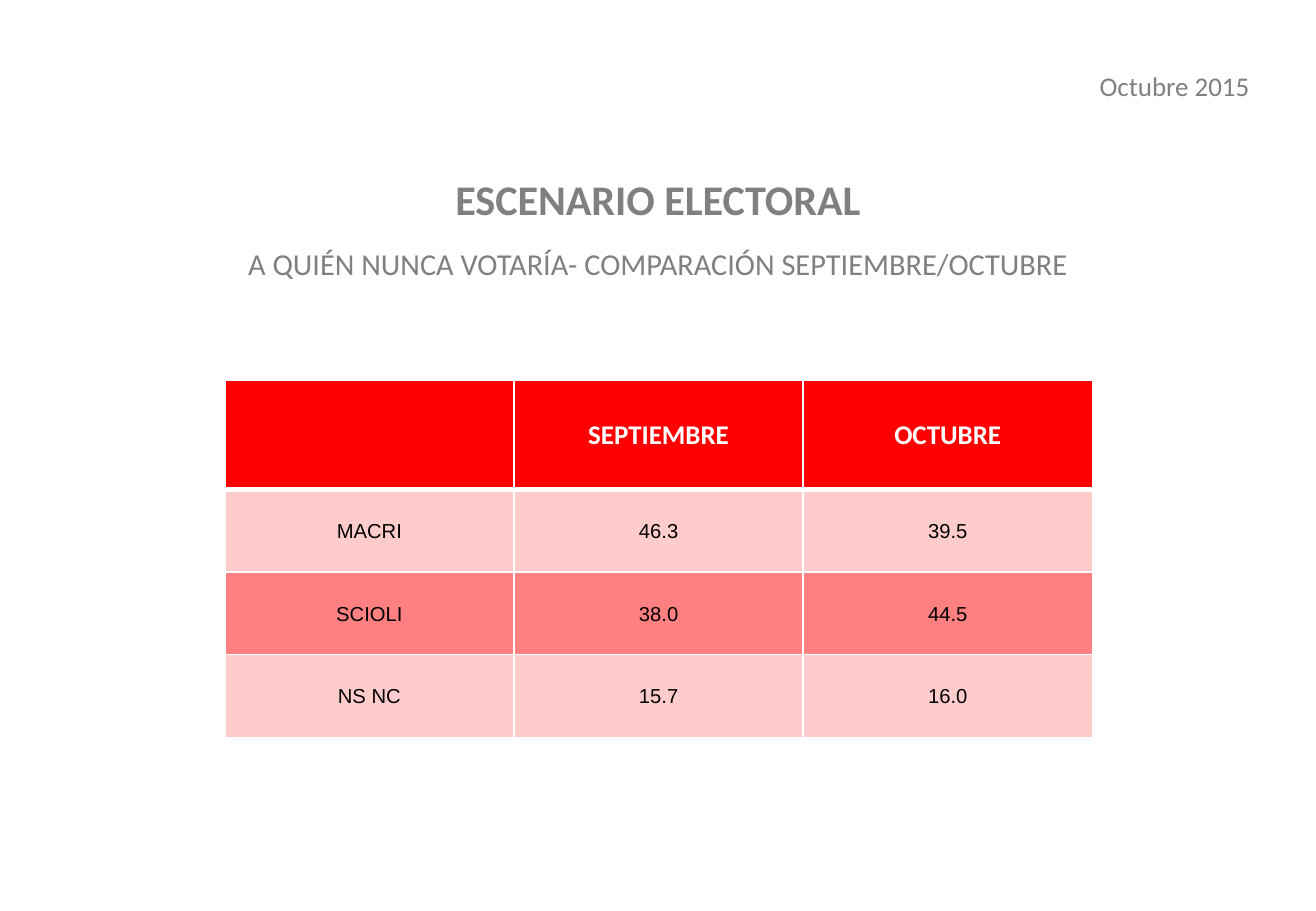
import pptx
import pptx.dml.color
import pptx.enum.text
import pptx.oxml
import pptx.oxml.ns
import pptx.util

Inches = pptx.util.Inches
Pt = pptx.util.Pt
RGBColor = pptx.dml.color.RGBColor
ALIGN = pptx.enum.text.PP_ALIGN
ANCHOR = pptx.enum.text.MSO_ANCHOR

GRAY = RGBColor(0x80, 0x80, 0x80)
RED = RGBColor(0xFF, 0x00, 0x00)
PINK = RGBColor(0xFF, 0xCC, 0xCC)
ROSE = RGBColor(0xFF, 0x80, 0x80)
WHITE = RGBColor(0xFF, 0xFF, 0xFF)
BLACK = RGBColor(0x00, 0x00, 0x00)

RESULTS = [
    ("", "SEPTIEMBRE", "OCTUBRE"),
    ("MACRI", "46.3", "39.5"),
    ("SCIOLI", "38.0", "44.5"),
    ("NS NC", "15.7", "16.0"),
]


def write(para, text, size, color, align, bold=False, name="Calibri"):
    para.text = text
    para.alignment = align
    para.font.size = Pt(size)
    para.font.name = name
    para.font.bold = bold
    para.font.color.rgb = color


def add_box(page, left, top, width, height):
    box = page.shapes.add_textbox(
        Inches(left), Inches(top), Inches(width), Inches(height))
    box.text_frame.word_wrap = True
    return box.text_frame


def add_heading(page):
    frame = add_box(page, 0, 1.49, 10.83, 1.64)
    frame.vertical_anchor = ANCHOR.BOTTOM
    frame.margin_top = 0
    frame.margin_bottom = Inches(0.82)
    title = frame.paragraphs[0]
    write(title, "ESCENARIO ELECTORAL", 25, GRAY, ALIGN.CENTER, bold=True)
    subtitle = frame.add_paragraph()
    write(subtitle, "A QUIÉN NUNCA VOTARÍA- COMPARACIÓN SEPTIEMBRE/OCTUBRE",
          18, GRAY, ALIGN.CENTER)
    subtitle.space_before = Pt(17)
    for para in frame.paragraphs:
        para.line_spacing = 0.8


def add_date(page):
    frame = add_box(page, 8.57, 0.52, 1.81, 0.37)
    write(frame.paragraphs[0], "Octubre 2015", 16, GRAY, ALIGN.RIGHT)


def set_borders(cell, widths):
    properties = cell._tc.get_or_add_tcPr()
    for index, (side, width) in enumerate(widths.items()):
        border = pptx.oxml.parse_xml(
            f'<a:{side} {pptx.oxml.ns.nsdecls("a")} w="{Pt(width)}">'
            f'<a:solidFill><a:srgbClr val="{WHITE}"/></a:solidFill></a:{side}>')
        properties.insert(index, border)


def fill_cell(cell, text, row):
    header = row == 0
    cell.vertical_anchor = ANCHOR.MIDDLE
    cell.margin_left = cell.margin_right = cell.margin_top = Inches(0.01)
    cell.margin_bottom = 0
    cell.fill.solid()
    cell.fill.fore_color.rgb = RED if header else PINK if row % 2 else ROSE
    para = cell.text_frame.paragraphs[0]
    if header:
        write(para, text, 16, WHITE, ALIGN.CENTER, bold=True)
    else:
        write(para, text, 12, BLACK, ALIGN.CENTER, name="Arial")
    set_borders(cell, {"lnL": 1, "lnR": 1,
                       "lnT": 3 if row == 1 else 1,
                       "lnB": 3 if header else 1})


def add_results(page):
    table = page.shapes.add_table(
        len(RESULTS), len(RESULTS[0]),
        Inches(1.85), Inches(3.13), Inches(7.13), Inches(2.94)).table
    for column in table.columns:
        column.width = Inches(2.38)
    for row, texts in enumerate(RESULTS):
        table.rows[row].height = Inches(0.68 if row else 0.9)
        for column, text in enumerate(texts):
            fill_cell(table.cell(row, column), text, row)


def main():
    deck = pptx.Presentation()
    deck.slide_width = Inches(10.83)
    deck.slide_height = Inches(7.5)
    page = deck.slides.add_slide(deck.slide_layouts[6])
    add_heading(page)
    add_date(page)
    add_results(page)
    deck.save("out.pptx")


if __name__ == "__main__":
    main()
